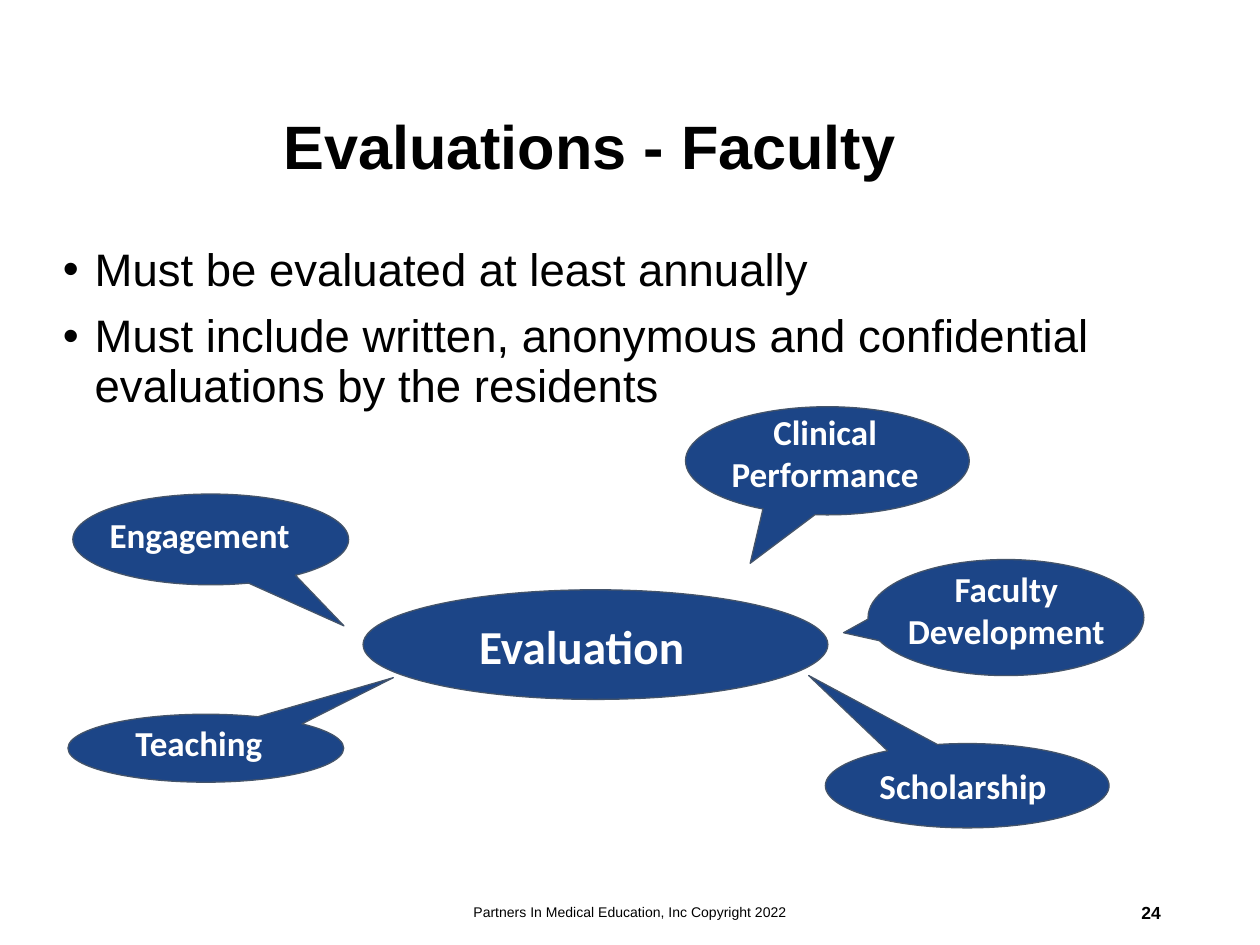
from lxml.etree import SubElement
from pptx import Presentation
from pptx.dml.color import RGBColor
from pptx.enum.shapes import MSO_SHAPE
from pptx.enum.text import MSO_ANCHOR, PP_ALIGN
from pptx.oxml.ns import qn
from pptx.util import Cm, Pt

BLACK, WHITE, NAVY, SLATE = "000000", "FFFFFF", "1C4587", "44546A"
LEFT, CENTER, RIGHT = PP_ALIGN.LEFT, PP_ALIGN.CENTER, PP_ALIGN.RIGHT
TOP, MIDDLE = MSO_ANCHOR.TOP, MSO_ANCHOR.MIDDLE

# Text formats
TITLE = {"name": "Arial", "size": Pt(35), "bold": True}
BODY = {"name": "Arial", "size": Pt(26), "bold": False}
FOOTER = {"name": "Arial", "size": Pt(8), "bold": False}
NUMBER = {"name": "Arial", "size": Pt(10), "bold": True}
TOPIC = {"name": "Calibri", "size": Pt(20), "bold": True}
HUB = {"name": "Calibri", "size": Pt(27), "bold": True}

REQUIREMENTS = [
    "Must be evaluated at least annually",
    "Must include written, anonymous and confidential evaluations by the residents",
]

# Topic, balloon box, pointer tip, label box, label alignment (boxes in cm)
TOPICS = [
    ("Engagement", (1.47, 9.96, 5.56, 1.83), (0.483, 0.953),
     (1.96, 10.11, 4.47, 1.37), LEFT),
    ("Teaching ", (1.37, 14.4, 5.56, 1.37), (0.68, -1.039),
     (2.31, 14.3, 3.56, 1.12), CENTER),
    ("Faculty Development", (17.5, 11.28, 5.56, 2.34), (-0.589, 0.131),
     (17.63, 11.2, 5.31, 2.24), CENTER),
    ("Clinical Performance", (13.82, 8.2, 5.72, 2.18), (-0.272, 0.948),
     (14.4, 8.03, 4.47, 2.24), CENTER),
    ("Scholarship", (16.64, 14.99, 5.72, 1.7), (-0.559, -1.307),
     (17.48, 15.16, 4.09, 1.37), LEFT),
]


def color(hex_value):
    return RGBColor.from_string(hex_value)


def apply(target, values):
    for attribute, value in values.items():
        setattr(target, attribute, value)


def add_text(slide, box, lines, style, ink=BLACK, align=LEFT, anchor=TOP,
             inset=0.13, spacing=1.0):
    frame = slide.shapes.add_textbox(*map(Cm, box)).text_frame
    apply(frame, {"word_wrap": True, "vertical_anchor": anchor,
                  "margin_left": Cm(0.25), "margin_right": Cm(0.25),
                  "margin_top": Cm(inset), "margin_bottom": Cm(inset)})
    frame.text = "\n".join(lines)
    for paragraph in frame.paragraphs:
        apply(paragraph, {"alignment": align, "line_spacing": spacing})
        for run in paragraph.runs:
            apply(run.font, style)
            run.font.color.rgb = color(ink)
    return frame


def add_bullets(frame, gap):
    for index, paragraph in enumerate(frame.paragraphs):
        if index:
            paragraph.space_before = gap
        properties = paragraph._p.get_or_add_pPr()
        properties.set("marL", str(Cm(0.64)))
        properties.set("indent", str(-Cm(0.64)))
        SubElement(properties, qn("a:buFont"), typeface="Arial")
        SubElement(properties, qn("a:buChar"), char="•")


def add_balloon(slide, box, kind, tip=()):
    balloon = slide.shapes.add_shape(kind, *map(Cm, box))
    balloon.shadow.inherit = False
    balloon.fill.solid()
    balloon.fill.fore_color.rgb = color(NAVY)
    balloon.line.color.rgb = color(SLATE)
    balloon.line.width = Pt(0.75)
    for index, offset in enumerate(tip):
        balloon.adjustments[index] = offset


def add_label(slide, box, text, style, align):
    add_text(slide, box, [text], style, WHITE, align, inset=0.25)


def main():
    deck = Presentation()
    deck.slide_width, deck.slide_height = Cm(25.4), Cm(19.05)
    slide = deck.slides.add_slide(deck.slide_layouts[6])

    # Footer
    add_text(slide, (8.41, 17.88, 8.59, 1.02),
             ["Partners In Medical Education, Inc Copyright 2022"],
             FOOTER, align=CENTER, anchor=MIDDLE)
    add_text(slide, (17.93, 17.88, 5.72, 1.02), ["24"],
             NUMBER, align=RIGHT, anchor=MIDDLE)

    # Requirements and title
    requirements = add_text(slide, (1.02, 4.85, 21.89, 9.25), REQUIREMENTS,
                            BODY, spacing=0.9)
    add_bullets(requirements, Pt(10))
    add_text(slide, (5.46, 1.63, 18.14, 2.77), ["Evaluations - Faculty"],
             TITLE, anchor=MIDDLE, spacing=0.9)

    # Central idea
    add_balloon(slide, (7.32, 11.89, 9.37, 2.21), MSO_SHAPE.OVAL)
    add_label(slide, (8.13, 12.19, 7.19, 1.12), "Evaluation", HUB, CENTER)

    # Topics around it
    for topic, balloon_box, tip, label_box, align in TOPICS:
        add_balloon(slide, balloon_box, MSO_SHAPE.OVAL_CALLOUT, tip)
        add_label(slide, label_box, topic, TOPIC, align)

    deck.save("out.pptx")


if __name__ == "__main__":
    main()
